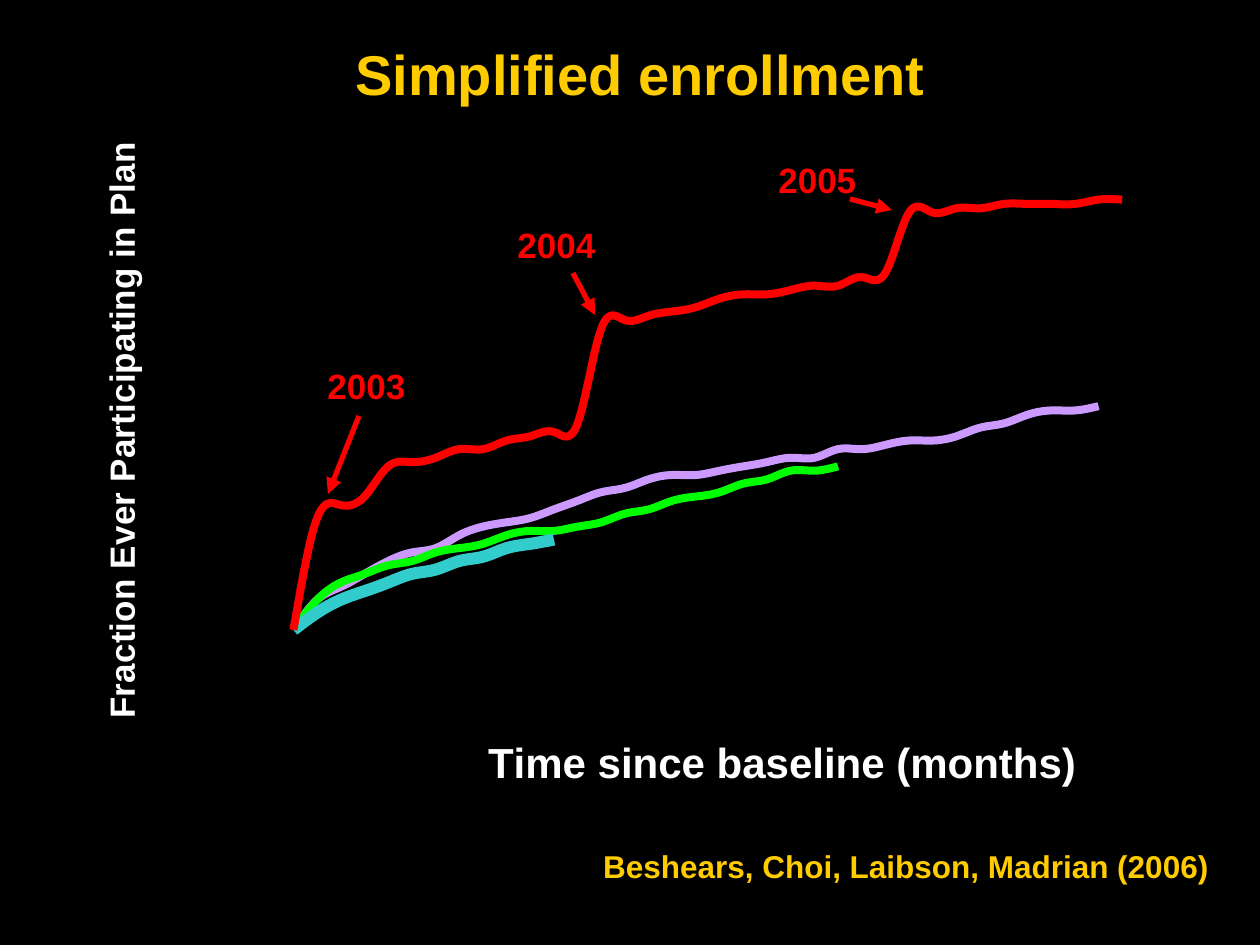
from lxml import etree
from pptx import Presentation
from pptx.chart.data import CategoryChartData
from pptx.dml.color import RGBColor
from pptx.enum.chart import XL_CHART_TYPE, XL_MARKER_STYLE
from pptx.enum.shapes import MSO_CONNECTOR
from pptx.enum.text import MSO_ANCHOR, PP_ALIGN
from pptx.oxml import parse_xml
from pptx.oxml.ns import qn
from pptx.util import Emu, Pt

SCALE = 914400 // 126
FONT = "Arial"
GOLD, RED, WHITE, BLACK = "FFCC00", "FF0000", "FFFFFF", "000000"
LINE_CHART = XL_CHART_TYPE.LINE
NO_MARKER = XL_MARKER_STYLE.NONE
STRAIGHT = MSO_CONNECTOR.STRAIGHT
CENTER, LEFT = PP_ALIGN.CENTER, PP_ALIGN.LEFT
MIDDLE = MSO_ANCHOR.MIDDLE
CHART_NS = "http://schemas.openxmlformats.org/drawingml/2006/chart"
MONTHS = 36

SERIES = [
    ("Series 1", "CC99FF", 4.56,
     [0, 7, 10, 13, 16, 18, 19, 22, 24, 25, 26, 28, 30, 32, 33, 35, 36, 36,
      37, 38, 39, 40, 40, 42, 42, 43, 44, 44, 45, 47, 48, 50, 51, 51, 52]),
    ("Series 2", "00FF00", 4.56,
     [0, 7, 11, 13, 15, 16, 18, 19, 20, 22, 23, 23, 24, 25, 27, 28, 30, 31,
      32, 34, 35, 37, 37, 38]),
    ("Series 3", "33CCCC", 6.85,
     [0, 4, 7, 9, 11, 13, 14, 16, 17, 19, 20, 21]),
    ("Series 4", RED, 4.56,
     [0, 26, 29, 31, 38, 39, 40, 42, 42, 44, 45, 46, 48, 70, 72, 73, 74, 75,
      77, 78, 78, 79, 80, 80, 82, 83, 97, 97, 98, 98, 99, 99, 99, 99, 100, 100]),
]

CALLOUTS = [
    ("2003", (315, 358), (359, 416), (328, 494)),
    ("2004", (505, 217), (573, 273), (595, 315)),
    ("2005", (766, 152), (850, 199), (892, 210)),
]


def px(value):
    return Emu(value * SCALE)


def color(value):
    return RGBColor.from_string(value)


def style_font(font, size, fill):
    font.name = FONT
    font.size = Pt(size)
    font.bold = True
    font.color.rgb = color(fill)


def write_text(shape, box, text, size, fill, align=LEFT, wrap=False):
    shape.left, shape.top, shape.width, shape.height = map(px, box)
    frame = shape.text_frame
    frame.word_wrap = wrap
    frame.vertical_anchor = MIDDLE
    para = frame.paragraphs[0]
    para.alignment = align
    span = para.add_run()
    span.text = text
    style_font(span.font, size, fill)


def add_label(page, box, text, size, fill, align=LEFT):
    write_text(page.shapes.add_textbox(0, 0, 0, 0), box, text, size, fill, align)


def manual_layout(x, y, width=None, height=None):
    inner = width is not None
    parts = [("layoutTarget", "inner")] if inner else []
    parts += [("xMode", "edge"), ("yMode", "edge"), ("x", x), ("y", y)]
    if inner:
        parts += [("w", width), ("h", height)]
    layout = parse_xml(f'<c:layout xmlns:c="{CHART_NS}"><c:manualLayout/></c:layout>')
    for name, value in parts:
        etree.SubElement(layout[0], qn(f"c:{name}")).set("val", str(value))
    return layout


def place_layout(element, layout, after=None):
    for old in element.findall(qn("c:layout")):
        element.remove(old)
    if after is None:
        element.insert(0, layout)
    else:
        element.find(qn(after)).addnext(layout)


def title_axis(axis, text, size, x, y):
    axis.has_major_gridlines = False
    title = axis.axis_title
    span = title.text_frame.paragraphs[0].add_run()
    span.text = text
    style_font(span.font, size, WHITE)
    place_layout(title._element, manual_layout(x, y), "c:tx")
    axis.visible = False
    return title


def add_enrollment_chart(page, box):
    data = CategoryChartData()
    data.categories = [str(month + 1) for month in range(MONTHS)]
    for name, _, _, values in SERIES:
        data.add_series(name, values + [None] * (MONTHS - len(values)))
    chart = page.shapes.add_chart(LINE_CHART, *map(px, box), data).chart
    chart.has_legend = False
    chart.has_title = False
    style_font(chart.font, 20, BLACK)
    plot = chart.plots[0]
    plot.vary_by_categories = False
    for series, (_, fill, width, _) in zip(plot.series, SERIES):
        series.smooth = True
        series.marker.style = NO_MARKER
        series.format.line.color.rgb = color(fill)
        series.format.line.width = Pt(width)
    title_axis(chart.category_axis, "Time since baseline (months)", 24, 0.41, 0.91)
    axis = chart.value_axis
    axis.minimum_scale, axis.maximum_scale, axis.major_unit = 0, 110, 22
    title = title_axis(axis, "Fraction Ever Participating in Plan", 20, 0.1, 0.17)
    body = title.text_frame._txBody.find(qn("a:bodyPr"))
    body.set("rot", "-5400000")
    body.set("vert", "horz")
    area = chart._chartSpace.chart.plotArea
    place_layout(area, manual_layout(0.251, 0.196, 0.682, 0.592))


def add_arrow(page, start, end):
    arrow = page.shapes.add_connector(STRAIGHT, *map(px, start + end))
    arrow.line.color.rgb = color(RED)
    arrow.line.width = Pt(3)
    etree.SubElement(arrow.line._get_or_add_ln(), qn("a:tailEnd")).set("type", "triangle")
    etree.SubElement(arrow._element.spPr, qn("a:effectLst"))


def add_callout(page, year, corner, start, end):
    add_label(page, corner + (103, 55), year, 20, RED)
    add_arrow(page, start, end)


def main():
    deck = Presentation()
    deck.slide_width, deck.slide_height = px(1260), px(945)
    page = deck.slides.add_slide(deck.slide_layouts[5])
    page.background.fill.solid()
    page.background.fill.fore_color.rgb = color(BLACK)
    add_enrollment_chart(page, (-32, 0, 1250, 800))
    for callout in CALLOUTS:
        add_callout(page, *callout)
    write_text(page.shapes.title, (21, 33, 1239, 81), "Simplified enrollment",
               32, GOLD, CENTER, True)
    add_label(page, (588, 840, 636, 51), "Beshears, Choi, Laibson, Madrian (2006)",
              18, GOLD, CENTER)
    deck.save("out.pptx")


if __name__ == "__main__":
    main()
